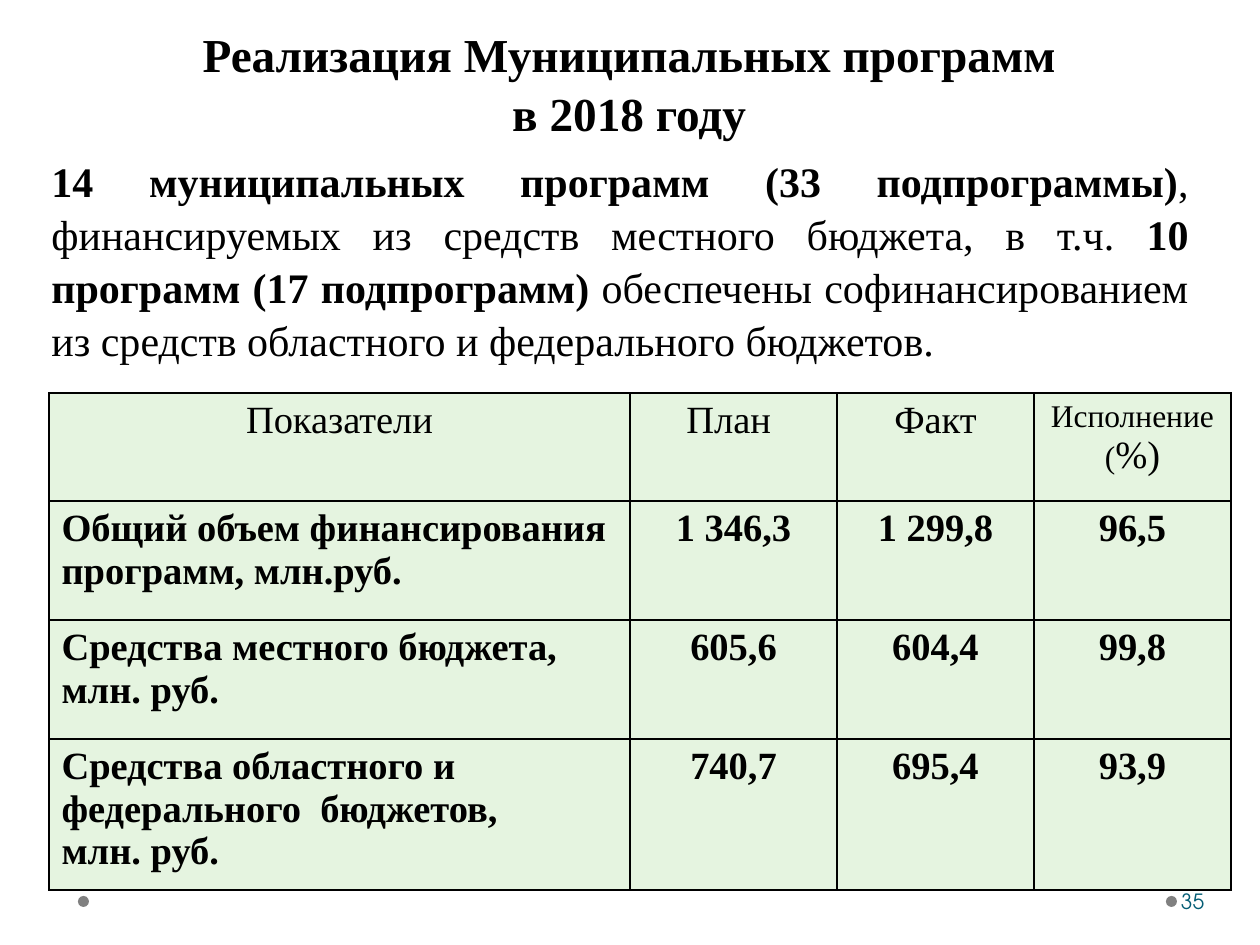
"""Build the slide on the 2018 municipal programmes with its funding table."""
from lxml import etree
from pptx import Presentation
from pptx.dml.color import RGBColor
from pptx.enum.shapes import MSO_SHAPE
from pptx.enum.text import MSO_ANCHOR, MSO_AUTO_SIZE, PP_ALIGN
from pptx.oxml.ns import qn
from pptx.util import Emu, Pt

BLACK = RGBColor(0, 0, 0)
GREY = RGBColor(0x80, 0x80, 0x80)
TEAL = RGBColor(0x04, 0x5D, 0x75)
PALE_GREEN = RGBColor(0xE5, 0xF4, 0xE0)
SERIF, SANS = "Times New Roman", "TeX Gyre Adventor"
LEFT, CENTER, JUSTIFY = PP_ALIGN.LEFT, PP_ALIGN.CENTER, PP_ALIGN.JUSTIFY
TOP, MIDDLE, BOTTOM = MSO_ANCHOR.TOP, MSO_ANCHOR.MIDDLE, MSO_ANCHOR.BOTTOM
NO_FIT = MSO_AUTO_SIZE.NONE
OVAL = MSO_SHAPE.OVAL


def px(*values):
    return [Emu(round(value * 914400 / 126)) for value in values]


def write(frame, paragraphs, size, align=LEFT, font=SERIF, color=BLACK, bold=False, spacing=None):
    """Write paragraphs given as lists of (text, format changes) spans."""
    frame.word_wrap = True
    for index, spans in enumerate(paragraphs):
        para = frame.add_paragraph() if index else frame.paragraphs[0]
        para.alignment = align
        if spacing:
            para.line_spacing = spacing
        for text, changes in spans:
            span = para.add_run()
            span.text = text
            span.font.name = font
            span.font.size = Pt(changes.get("size", size))
            span.font.bold = changes.get("bold", bold)
            span.font.color.rgb = color


deck = Presentation()
deck.slide_width, deck.slide_height = px(1260, 945)
page = deck.slides.add_slide(deck.slide_layouts[5])

for left in (1166, 78):
    dot = page.shapes.add_shape(OVAL, *px(left, 896, 11, 11))
    dot.shadow.inherit = False
    dot.fill.solid()
    dot.fill.fore_color.rgb = GREY
    dot.line.fill.background()

title = page.shapes.title
title.left, title.top, title.width, title.height = px(49, 49, 1172, 98)
title.text_frame.auto_size = NO_FIT
title.text_frame.vertical_anchor = BOTTOM
write(title.text_frame, [[("Реализация Муниципальных программ ", {})], [("в 2018 году ", {})]],
      size=27, align=CENTER, bold=True, spacing=1.03)

number = page.shapes.add_textbox(*px(1177, 876, 77, 50)).text_frame
number.margin_left, = px(4)
number.vertical_anchor = MIDDLE
write(number, [[("35", {})]], size=12, font=SANS, color=TEAL)

summary = page.shapes.add_textbox(*px(39, 147, 1162, 217)).text_frame
write(summary, [[
    ("14 муниципальных программ (33 подпрограммы)", {"bold": True}),
    (", финансируемых из средств местного бюджета, в т.ч. ", {}),
    ("10 программ (17 подпрограмм) ", {"bold": True}),
    ("обеспечены софинансированием из средств областного и федерального бюджетов.", {}),
]], size=24, align=JUSTIFY, spacing=1.05)

COLUMN_WIDTHS = px(581, 207, 197, 197)
ROW_HEIGHTS = px(108, 119, 119, 151)
ROWS = [
    ["Показатели", "План ", "Факт", "Исполнение(|%)"],
    ["Общий объем финансирования программ, млн.руб.", "1 346,3", "1 299,8", "96,5"],
    ["Средства местного бюджета,\nмлн. руб.", "605,6", "604,4", "99,8"],
    ["Средства областного и\nфедерального  бюджетов,\nмлн. руб.", "740,7", "695,4", "93,9"],
]
table = page.shapes.add_table(len(ROWS), len(COLUMN_WIDTHS), *px(49, 393, 1182, 497)).table
for column, width in zip(table.columns, COLUMN_WIDTHS):
    column.width = width
for row, height in zip(table.rows, ROW_HEIGHTS):
    row.height = height

for row_index, row in enumerate(ROWS):
    for column_index, text in enumerate(row):
        cell = table.cell(row_index, column_index)
        cell.vertical_anchor = TOP
        properties = cell._tc.get_or_add_tcPr()
        for side in ("a:lnL", "a:lnR", "a:lnT", "a:lnB"):
            border = etree.SubElement(properties, qn(side), w=str(Pt(1)))
            solid = etree.SubElement(border, qn("a:solidFill"))
            etree.SubElement(solid, qn("a:srgbClr"), val=str(BLACK))
        cell.fill.solid()
        cell.fill.fore_color.rgb = PALE_GREEN
        small, bar, rest = text.partition("|")
        if bar:
            paragraphs = [[(small, {"size": 18}), (rest, {})]]
        else:
            paragraphs = [[(line, {})] for line in text.split("\n")]
        is_label = row_index > 0 and column_index == 0
        write(cell.text_frame, paragraphs, size=22, bold=row_index > 0,
              align=LEFT if is_label else CENTER)

deck.save("out.pptx")
